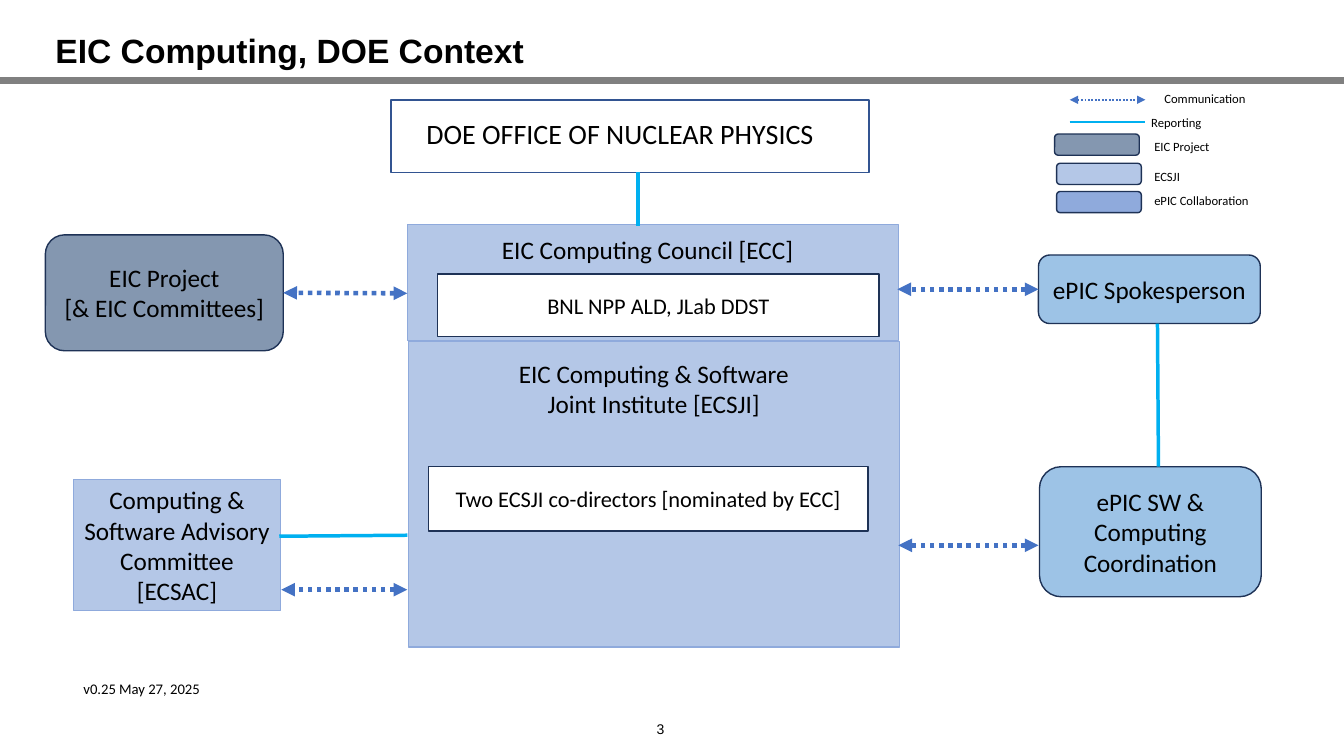
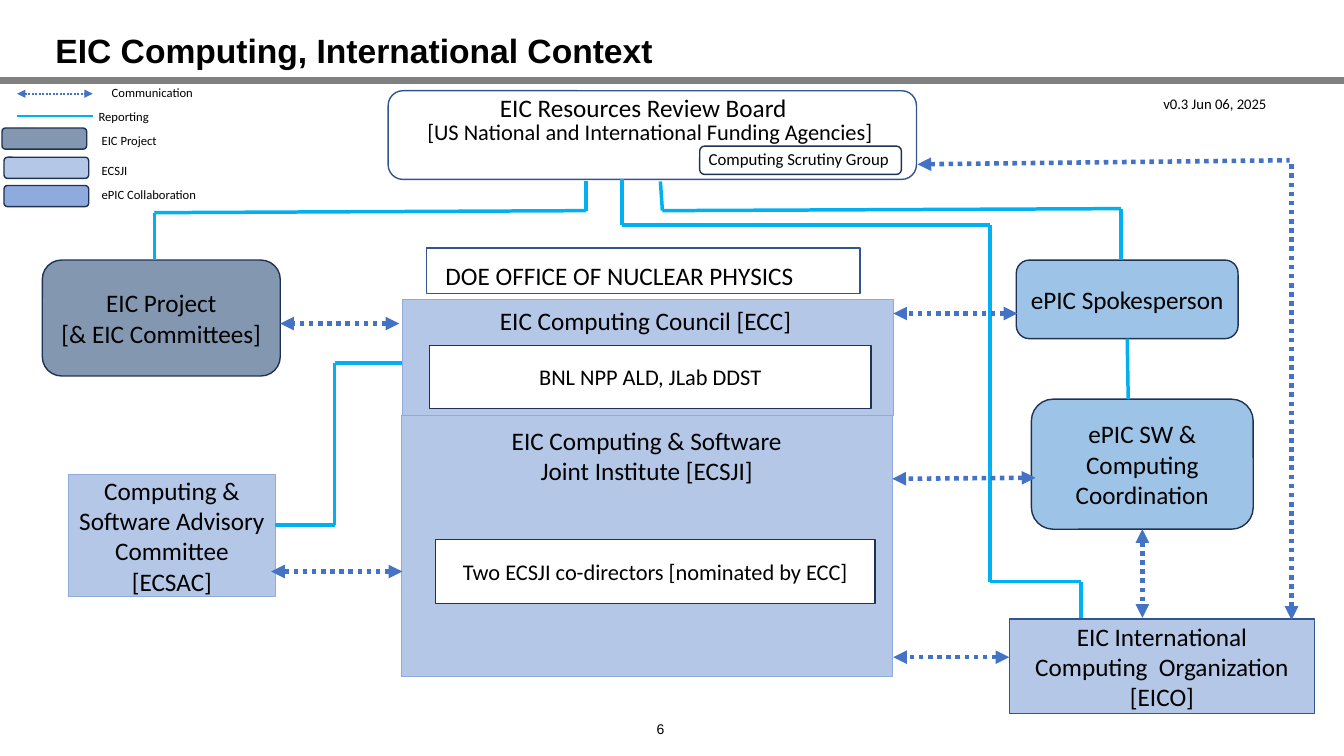
from itertools import pairwise

from lxml import etree
from pptx import Presentation
from pptx.dml.color import RGBColor
from pptx.enum.dml import MSO_LINE
from pptx.enum.shapes import MSO_CONNECTOR, MSO_SHAPE
from pptx.enum.text import MSO_ANCHOR as ANCHOR, PP_ALIGN as ALIGN
from pptx.oxml.ns import qn
from pptx.util import Inches, Pt

BLACK = RGBColor(0x00, 0x00, 0x00)
WHITE = RGBColor(0xFF, 0xFF, 0xFF)
GRAY = RGBColor(0x80, 0x80, 0x80)
SLATE = RGBColor(0x84, 0x97, 0xB0)
PALE = RGBColor(0xB4, 0xC7, 0xE7)
PERIWINKLE = RGBColor(0x8F, 0xAA, 0xDC)
SKY = RGBColor(0x9D, 0xC3, 0xE6)
NAVY = RGBColor(0x1E, 0x32, 0x56)
EDGE = RGBColor(0x32, 0x54, 0x91)
ARROW = RGBColor(0x44, 0x72, 0xC4)
CYAN = RGBColor(0x00, 0xB0, 0xF0)

RECT = MSO_SHAPE.RECTANGLE
ROUND = MSO_SHAPE.ROUNDED_RECTANGLE
TOP, LEFT, BOTTOM, RIGHT = range(4)

PROJECT = ["EIC Project", "[& EIC Committees]"]
ADVISORY = ["Computing & Software Advisory Committee", "[ECSAC]"]
INSTITUTE = ["EIC Computing & Software", "Joint Institute [ECSJI]"]
COORDINATION = ["ePIC SW & Computing", "Coordination"]
COUNCIL = "EIC Computing Council [ECC]"
MEMBERS = "BNL NPP ALD, JLab DDST"
DIRECTORS = "Two ECSJI co-directors [nominated by ECC]"
OFFICE = "DOE OFFICE OF NUCLEAR PHYSICS"
SPOKESPERSON = "ePIC Spokesperson"


def write(tf, lines, size, align=ALIGN.CENTER, font="Calibri", bold=False):
    for i, line in enumerate(lines):
        p = tf.paragraphs[0] if i == 0 else tf.add_paragraph()
        p.alignment = align
        r = p.add_run()
        r.text = line
        r.font.name = font
        r.font.size = Pt(size)
        r.font.bold = bold
        r.font.color.rgb = BLACK


def add_box(s, x, y, w, h, fill, edge, lines=(), size=18, kind=RECT, top_inset=None):
    sp = s.shapes.add_shape(kind, Inches(x), Inches(y), Inches(w), Inches(h))
    sp.shadow.inherit = False
    sp.fill.solid()
    sp.fill.fore_color.rgb = fill
    sp.line.color.rgb = edge
    sp.line.width = Pt(1)
    tf = sp.text_frame
    tf.word_wrap = True
    tf.vertical_anchor = ANCHOR.MIDDLE
    if top_inset is not None:
        tf.vertical_anchor = ANCHOR.TOP
        tf.margin_top = Inches(top_inset)
    write(tf, lines, size)
    return sp


def add_label(s, x, y, w, h, text, size):
    tf = s.shapes.add_textbox(Inches(x), Inches(y), Inches(w), Inches(h)).text_frame
    tf.word_wrap = True
    write(tf, [text], size, ALIGN.LEFT)


def add_line(s, start, end, color, width):
    ends = [Inches(v) for v in (*start, *end)]
    c = s.shapes.add_connector(MSO_CONNECTOR.STRAIGHT, *ends)
    c.line.color.rgb = color
    c.line.width = Pt(width)
    etree.SubElement(c.element.spPr, qn("a:effectLst"))
    return c


def add_arrow(s, start, end, width=3.25, heads=("headEnd", "tailEnd")):
    c = add_line(s, start, end, ARROW, width)
    c.line.dash_style = MSO_LINE.ROUND_DOT
    ln = c.element.spPr.find(qn("a:ln"))
    for head in heads:
        etree.SubElement(ln, qn(f"a:{head}"), type="triangle")
    return c


def add_reporting(s, *points):
    return [add_line(s, a, b, CYAN, 2.5) for a, b in pairwise(points)]


def add_legend(s, x, y):
    add_arrow(s, (x + 0.15, y + 0.14), (x + 0.9, y + 0.14), 1.25)
    add_line(s, (x + 0.15, y + 0.36), (x + 0.9, y + 0.36), CYAN, 1.25)
    entries = [
        (0.99, 0, "Communication"),
        (0.86, 0.24, "Reporting"),
        (0.89, 0.48, "EIC Project"),
        (0.89, 0.78, "ECSJI"),
        (0.89, 1.01, "ePIC Collaboration"),
    ]
    for dx, dy, text in entries:
        add_label(s, x + dx, y + dy, 1.3, 0.25, text, 9)
    swatches = [(0, 0.48, SLATE), (0.02, 0.77, PALE), (0.02, 1.05, PERIWINKLE)]
    for dx, dy, fill in swatches:
        add_box(s, x + dx, y + dy, 0.84, 0.21, fill, NAVY, kind=ROUND)


def style_layout(layout):
    title = layout.placeholders[0]
    title.left, title.top = Inches(0.45), Inches(0.26)
    title.width, title.height = Inches(12.34), Inches(0.53)


def add_slide(prs, layout, title, number):
    s = prs.slides.add_slide(layout)
    tf = s.shapes.title.text_frame
    tf.vertical_anchor = ANCHOR.MIDDLE
    write(tf, [title], 24, ALIGN.LEFT, "Arial", True)
    tf.paragraphs[0].line_spacing = 0.9
    box = s.shapes.add_textbox(Inches(6.16), Inches(7.07), Inches(0.78), Inches(0.33))
    box.text_frame.word_wrap = True
    box.text_frame.vertical_anchor = ANCHOR.MIDDLE
    write(box.text_frame, [number], 10, font="Arial")
    return s


def move_rule_to_layout(s, layout):
    rule = add_line(s, (-0.02, 0.8), (13.33, 0.8), GRAY, 4.5)
    layout.shapes.element.append(rule.element)


def build_doe(s):
    project = add_box(s, 0.45, 2.33, 2.36, 1.15, SLATE, NAVY, PROJECT, kind=ROUND)
    add_box(s, 4.05, 3.39, 4.87, 3.03, PALE, PERIWINKLE, INSTITUTE, top_inset=0.16)
    add_box(s, 4.04, 2.23, 4.87, 1.15, PALE, PERIWINKLE)
    add_box(s, 0.73, 4.76, 2.05, 1.3, PALE, PERIWINKLE, ADVISORY)
    add_box(s, 4.34, 2.72, 4.38, 0.62, WHITE, NAVY, [MEMBERS], 16)
    add_box(s, 4.25, 4.63, 4.36, 0.64, WHITE, NAVY, [DIRECTORS], 16)
    add_box(s, 10.31, 4.63, 2.2, 1.29, SKY, NAVY, COORDINATION, kind=ROUND)
    spokesperson = add_box(s, 10.3, 2.53, 2.2, 0.68, SKY, NAVY, [SPOKESPERSON], kind=ROUND)
    add_box(s, 3.88, 0.99, 4.74, 0.72, WHITE, EDGE)
    add_label(s, 4.88, 2.28, 3.57, 0.4, COUNCIL, 18)
    add_label(s, 4.13, 1.11, 4.4, 0.44, OFFICE, 20)

    add_arrow(s, (4.04, 2.91), (2.81, 2.91)).end_connect(project, RIGHT)
    add_arrow(s, (10.3, 2.87), (8.9, 2.87)).begin_connect(spokesperson, LEFT)
    add_arrow(s, (10.3, 5.41), (8.91, 5.41))
    add_arrow(s, (4.04, 5.85), (2.79, 5.85))
    add_reporting(s, (6.33, 1.71), (6.33, 2.24))
    add_reporting(s, (4.04, 5.31), (2.77, 5.32))
    add_reporting(s, (11.48, 3.21), (11.49, 4.63))

    add_label(s, 0.73, 6.69, 1.6, 0.28, "v0.25 May 27, 2025", 10.5)
    add_legend(s, 10.46, 0.85)


def build_international(s):
    add_box(s, 0.42, 2.58, 2.36, 1.15, SLATE, NAVY, PROJECT, kind=ROUND)
    add_box(s, 3.98, 4.12, 4.87, 2.59, PALE, PERIWINKLE, INSTITUTE, top_inset=0.1)
    add_box(s, 3.99, 2.97, 4.87, 1.15, PALE, PERIWINKLE)
    add_box(s, 0.68, 4.71, 2.05, 1.21, PALE, PERIWINKLE, ADVISORY)
    add_box(s, 4.26, 3.43, 4.38, 0.62, WHITE, NAVY, [MEMBERS], 16)
    add_box(s, 4.32, 5.35, 4.36, 0.64, WHITE, NAVY, [DIRECTORS], 16)
    coordination = add_box(s, 10.23, 3.96, 2.2, 1.29, SKY, NAVY, COORDINATION, kind=ROUND)
    spokesperson = add_box(s, 10.08, 2.58, 2.2, 0.78, SKY, NAVY, [SPOKESPERSON], kind=ROUND)
    add_box(s, 10.01, 6.14, 3.03, 0.94, PALE, EDGE,
            ["EIC International Computing  Organization", "[EICO]"])
    add_label(s, 4.86, 2.98, 3.57, 0.4, COUNCIL, 18)

    add_box(s, 3.85, 0.9, 5.24, 0.88, WHITE, EDGE, kind=ROUND)
    add_label(s, 4.86, 0.87, 3.57, 0.4, "EIC Resources Review Board", 18)
    add_label(s, 4.14, 1.12, 4.9, 0.37,
              "[US National and International Funding Agencies]", 16)
    add_box(s, 6.94, 1.45, 2, 0.28, WHITE, NAVY, kind=ROUND)
    add_label(s, 6.93, 1.43, 2.15, 0.3, "Computing Scrutiny Group", 12)
    add_box(s, 4.23, 2.46, 4.3, 0.45, WHITE, EDGE)
    add_label(s, 4.32, 2.53, 4.2, 0.4, OFFICE, 18)

    add_reporting(s, (5.81, 1.8), (5.81, 2.09), (1.53, 2.11), (1.53, 2.58))
    add_reporting(s, (6.55, 1.8), (6.57, 2.09), (11.12, 2.07), (11.12, 2.58))
    add_reporting(s, (6.17, 1.78), (6.17, 2.23), (9.82, 2.23),
                  (9.82, 5.77), (10.72, 5.77), (10.72, 6.13))
    add_reporting(s, (3.99, 3.6), (3.32, 3.6), (3.32, 5.21), (2.73, 5.21))
    add_reporting(s, (11.18, 3.36), (11.19, 3.96))[0].begin_connect(spokesperson, BOTTOM)

    add_arrow(s, (9.1, 1.63), (12.79, 1.59), heads=["headEnd"])
    add_arrow(s, (12.81, 1.63), (12.81, 6.15), heads=["tailEnd"])
    add_arrow(s, (11.33, 5.25), (11.33, 6.13)).begin_connect(coordination, BOTTOM)
    add_arrow(s, (3.96, 3.21), (2.78, 3.21))
    add_arrow(s, (3.99, 5.67), (2.69, 5.67))
    add_arrow(s, (10.01, 6.52), (8.86, 6.52))
    add_arrow(s, (10.27, 4.74), (8.85, 4.75))
    add_arrow(s, (10.09, 3.11), (8.86, 3.11))

    add_label(s, 11.44, 0.89, 1.6, 0.28, "v0.3 Jun 06, 2025", 10.5)
    add_legend(s, 0.02, 0.79)


def main():
    prs = Presentation()
    prs.slide_width, prs.slide_height = Inches(13.33), Inches(7.5)
    layout = prs.slide_layouts[5]
    style_layout(layout)
    doe = add_slide(prs, layout, "EIC Computing, DOE Context", "3")
    move_rule_to_layout(doe, layout)
    build_doe(doe)
    build_international(add_slide(prs, layout, "EIC Computing, International Context", "6"))
    prs.save("out.pptx")


if __name__ == "__main__":
    main()
